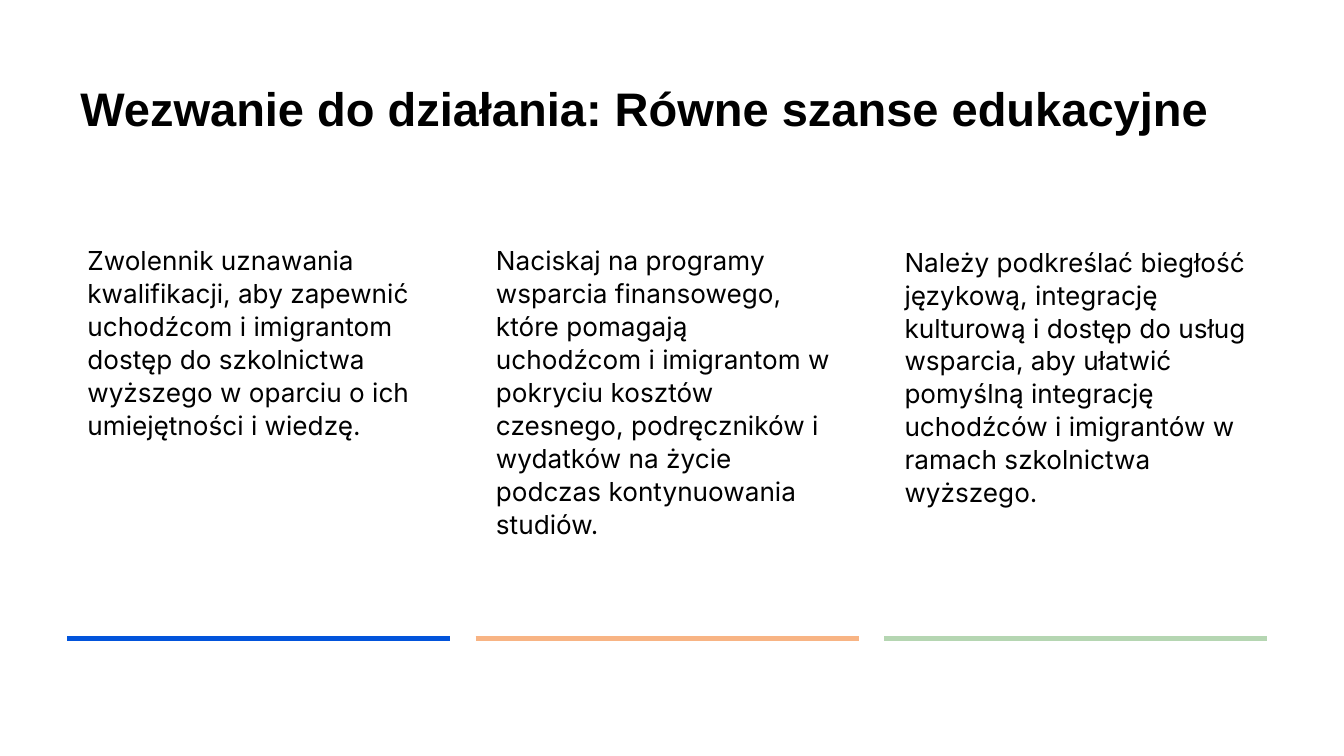
"""Build a slide with a title and three text columns, each closed by a coloured rule."""
from lxml.etree import SubElement
from pptx import Presentation
from pptx.dml.color import RGBColor
from pptx.enum.shapes import MSO_CONNECTOR, MSO_SHAPE
from pptx.enum.text import MSO_ANCHOR, PP_ALIGN
from pptx.oxml.ns import qn
from pptx.util import Inches, Pt

BLACK = RGBColor(0x00, 0x00, 0x00)
WHITE = RGBColor(0xFF, 0xFF, 0xFF)
BLUE = RGBColor(0x02, 0x54, 0xDB)
ORANGE = RGBColor(0xF8, 0xB4, 0x84)
GREEN = RGBColor(0xB5, 0xD6, 0xB2)

SLIDE_WIDTH = 10
SLIDE_HEIGHT = SLIDE_WIDTH * 9 / 16
MARGIN, COLUMN_WIDTH, COLUMN_STEP = 0.5, 2.85, 3.04
COLUMN_TOP, COLUMN_BOTTOM = 1.61, 4.75

TITLE = "Wezwanie do działania: Równe szanse edukacyjne"
COLUMNS = [
    ("Zwolennik uznawania kwalifikacji, aby zapewnić uchodźcom i imigrantom "
     "dostęp do szkolnictwa wyższego w oparciu o ich umiejętności i wiedzę.", BLUE, 0),
    ("Naciskaj na programy wsparcia finansowego, które pomagają uchodźcom i "
     "imigrantom w pokryciu kosztów czesnego, podręczników i wydatków na życie "
     "podczas kontynuowania studiów.", ORANGE, 0),
    ("Należy podkreślać biegłość językową, integrację kulturową i dostęp do usług "
     "wsparcia, aby ułatwić pomyślną integrację uchodźców i imigrantów w ramach "
     "szkolnictwa wyższego.", GREEN, 0.01),
]


def write_text(shape, text, font_name, size, insets, anchor, bold=False):
    frame = shape.text_frame
    frame.text = text
    frame.word_wrap = True
    frame.vertical_anchor = anchor
    (frame.margin_left, frame.margin_top,
     frame.margin_right, frame.margin_bottom) = map(Inches, insets)
    paragraph = frame.paragraphs[0]
    paragraph.alignment = PP_ALIGN.LEFT
    font = paragraph.runs[0].font
    font.name, font.size, font.bold = font_name, Pt(size), bold
    font.color.rgb = BLACK
    return paragraph


def add_title(slide, text):
    box = slide.shapes.add_textbox(
        Inches(MARGIN), Inches(0.49), Inches(SLIDE_WIDTH - 2 * MARGIN), Inches(0.63))
    write_text(box, text, "Arial", 25.2, (0.1, 0.1, 0.1, 0.1), MSO_ANCHOR.MIDDLE, bold=True)


def add_card(slide, left, top, text):
    card = slide.shapes.add_shape(
        MSO_SHAPE.RECTANGLE, Inches(left), Inches(top),
        Inches(COLUMN_WIDTH), Inches(COLUMN_BOTTOM - top))
    card.shadow.inherit = False
    card.fill.solid()
    card.fill.fore_color.rgb = WHITE
    card.line.color.rgb = WHITE
    card.line.width = Pt(1)
    paragraph = write_text(card, text, "Inter", 14, (0.15, 0.2, 0.15, 0.1), MSO_ANCHOR.TOP)
    paragraph.line_spacing = 1.05
    paragraph.space_after = Pt(10)


def add_rule(slide, left, color):
    rule = slide.shapes.add_connector(
        MSO_CONNECTOR.STRAIGHT, Inches(left), Inches(COLUMN_BOTTOM),
        Inches(left + COLUMN_WIDTH), Inches(COLUMN_BOTTOM))
    rule.line.color.rgb = color
    rule.line.width = Pt(3)
    SubElement(rule._element.spPr, qn("a:effectLst"))


def main():
    presentation = Presentation()
    presentation.slide_width = Inches(SLIDE_WIDTH)
    presentation.slide_height = Inches(SLIDE_HEIGHT)
    slide = presentation.slides.add_slide(presentation.slide_layouts[6])
    add_title(slide, TITLE)
    for index, (text, color, drop) in enumerate(COLUMNS):
        left = MARGIN + index * COLUMN_STEP
        add_card(slide, left, COLUMN_TOP + drop, text)
        add_rule(slide, left, color)
    presentation.save("out.pptx")


if __name__ == "__main__":
    main()
